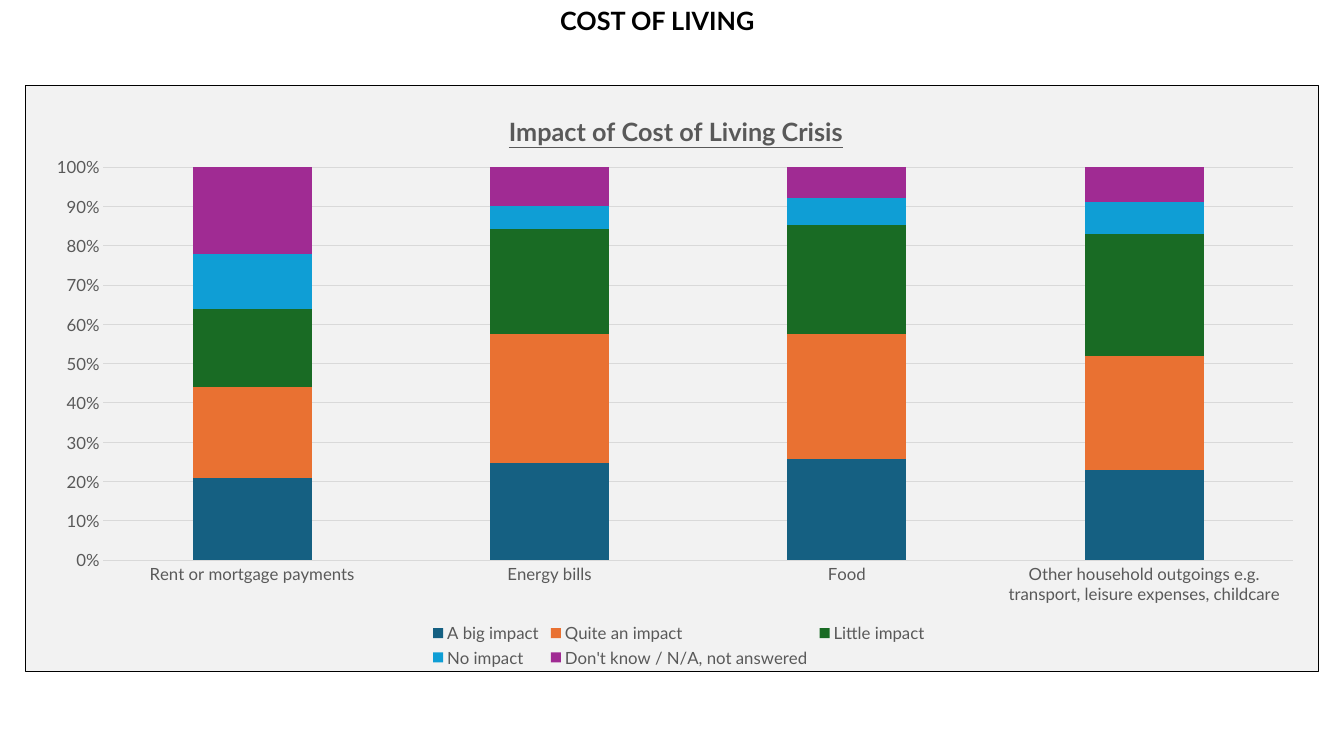
from dataclasses import dataclass

from lxml import etree
from pptx import Presentation
from pptx import util as u
from pptx.chart.data import CategoryChartData
from pptx.dml.color import RGBColor
from pptx.enum import chart as charts, text
from pptx.oxml import parse_xml
from pptx.oxml.ns import nsdecls, qn


@dataclass(frozen=True)
class Theme:
    font: str = "Lato"
    ink: str = "000000"
    label: str = "595959"
    grid: str = "D9D9D9"
    panel: str = "F2F2F2"
    series: tuple = ("156082", "E97132", "196B24", "0F9ED5", "A02B93")
    title_size: int = 18
    label_size: int = 12
    line: float = 0.75


CATEGORIES = [
    "Rent or mortgage payments",
    "Energy bills",
    "Food",
    "Other household outgoings e.g. transport, leisure expenses, childcare",
]
ANSWERS = {
    "A big impact": (21, 25, 26, 23),
    "Quite an impact": (23, 33, 32, 29),
    "Little impact": (20, 27, 28, 31),
    "No impact": (14, 6, 7, 8),
    "Don't know / N/A, not answered": (22, 10, 8, 9),
}


class Page:
    def __init__(self, deck, theme):
        self.theme = theme
        self.slide = deck.slides.add_slide(deck.slide_layouts[5])

    def style(self, font, size, color, bold=False):
        font.name, font.size, font.bold = self.theme.font, u.Pt(size), bold
        font.color.rgb = RGBColor.from_string(color)

    def title(self, words, left, top, width, height):
        box = self.slide.shapes.title
        box.left, box.top = u.Cm(left), u.Cm(top)
        box.width, box.height = u.Cm(width), u.Cm(height)
        frame = box.text_frame
        frame.text = words
        frame.word_wrap = True
        frame.auto_size = text.MSO_AUTO_SIZE.SHAPE_TO_FIT_TEXT
        frame.vertical_anchor = text.MSO_ANCHOR.TOP
        para = frame.paragraphs[0]
        para.alignment = text.PP_ALIGN.CENTER
        para.line_spacing = 1.0
        para.space_before = u.Pt(0)
        self.style(para.font, self.theme.title_size, self.theme.ink, True)

    def place(self, element, index, **fractions):
        """Give a chart element a fixed place, as fractions of the chart."""
        for old in element.findall(qn("c:layout")):
            element.remove(old)
        layout = parse_xml(f"<c:layout {nsdecls('c')}><c:manualLayout/></c:layout>")
        for name, value in fractions.items():
            etree.SubElement(layout[0], qn(f"c:{name}")).set("val", str(value))
        element.insert(index, layout)

    def panel(self, space):
        """Fill and frame the chart area, with square corners."""
        for old in space.findall(qn("c:roundedCorners")):
            space.remove(old)
        corners = parse_xml(f'<c:roundedCorners {nsdecls("c")} val="0"/>')
        space.insert(0 if space.find(qn("c:date1904")) is None else 1, corners)
        space.find(qn("c:chart")).addnext(parse_xml(
            f'<c:spPr {nsdecls("c", "a")}>'
            f'<a:solidFill><a:srgbClr val="{self.theme.panel}"/></a:solidFill>'
            f'<a:ln w="{int(u.Pt(self.theme.line))}"><a:solidFill>'
            f'<a:srgbClr val="{self.theme.ink}"/></a:solidFill></a:ln></c:spPr>'))

    def line(self, line):
        line.color.rgb = RGBColor.from_string(self.theme.grid)
        line.width = u.Pt(self.theme.line)

    def stacked_chart(self, heading, categories, answers, left, top, width, height):
        theme = self.theme
        data = CategoryChartData()
        data.categories = categories
        for name, values in answers.items():
            data.add_series(name, values)
        chart = self.slide.shapes.add_chart(
            charts.XL_CHART_TYPE.COLUMN_STACKED_100,
            u.Cm(left), u.Cm(top), u.Cm(width), u.Cm(height), data).chart
        self.style(chart.font, theme.label_size, theme.label)
        self.panel(chart.element)

        # Columns
        plot = chart.plots[0]
        plot.gap_width, plot.overlap = 150, 100
        plot.vary_by_categories = False
        for series, color in zip(plot.series, theme.series):
            series.format.fill.solid()
            series.format.fill.fore_color.rgb = RGBColor.from_string(color)

        # Axes
        for axis in (chart.category_axis, chart.value_axis):
            axis.major_tick_mark = axis.minor_tick_mark = charts.XL_TICK_MARK.NONE
            self.style(axis.tick_labels.font, theme.label_size, theme.label)
        self.line(chart.category_axis.format.line)
        chart.value_axis.format.line.fill.background()
        chart.value_axis.has_major_gridlines = True
        self.line(chart.value_axis.major_gridlines.format.line)
        chart.value_axis.tick_labels.number_format = "0%"
        chart.value_axis.tick_labels.number_format_is_linked = False

        # Heading
        chart.has_title = True
        para = chart.chart_title.text_frame.paragraphs[0]
        span = para.add_run()
        span.text = heading
        self.style(span.font, theme.title_size, theme.label, True)
        span.font.underline = True

        # Legend
        chart.has_legend = True
        chart.legend.position = charts.XL_LEGEND_POSITION.BOTTOM
        chart.legend.include_in_layout = False
        self.style(chart.legend.font, theme.label_size, theme.label)

        # Places inside the chart
        edge = {"xMode": "edge", "yMode": "edge"}
        root = chart.element.find(qn("c:chart"))
        self.place(root.find(qn("c:title")), 1, **edge, x=0.37, y=0.04)
        self.place(root.find(qn("c:plotArea")), 0, layoutTarget="inner", **edge,
                   x=0.06, y=0.14, w=0.92, h=0.67)
        self.place(root.find(qn("c:legend")), 1, **edge, x=0.31, y=0.91, w=0.39, h=0.09)


def main():
    deck = Presentation()
    deck.slide_width, deck.slide_height = u.Cm(33.87), u.Cm(19.05)
    page = Page(deck, Theme())
    page.stacked_chart("Impact of Cost of Living Crisis", CATEGORIES, ANSWERS,
                       0.64, 2.13, 32.61, 14.81)
    page.title("COST OF LIVING", 7.04, 0, 19.05, 1.02)
    deck.save("out.pptx")


if __name__ == "__main__":
    main()
